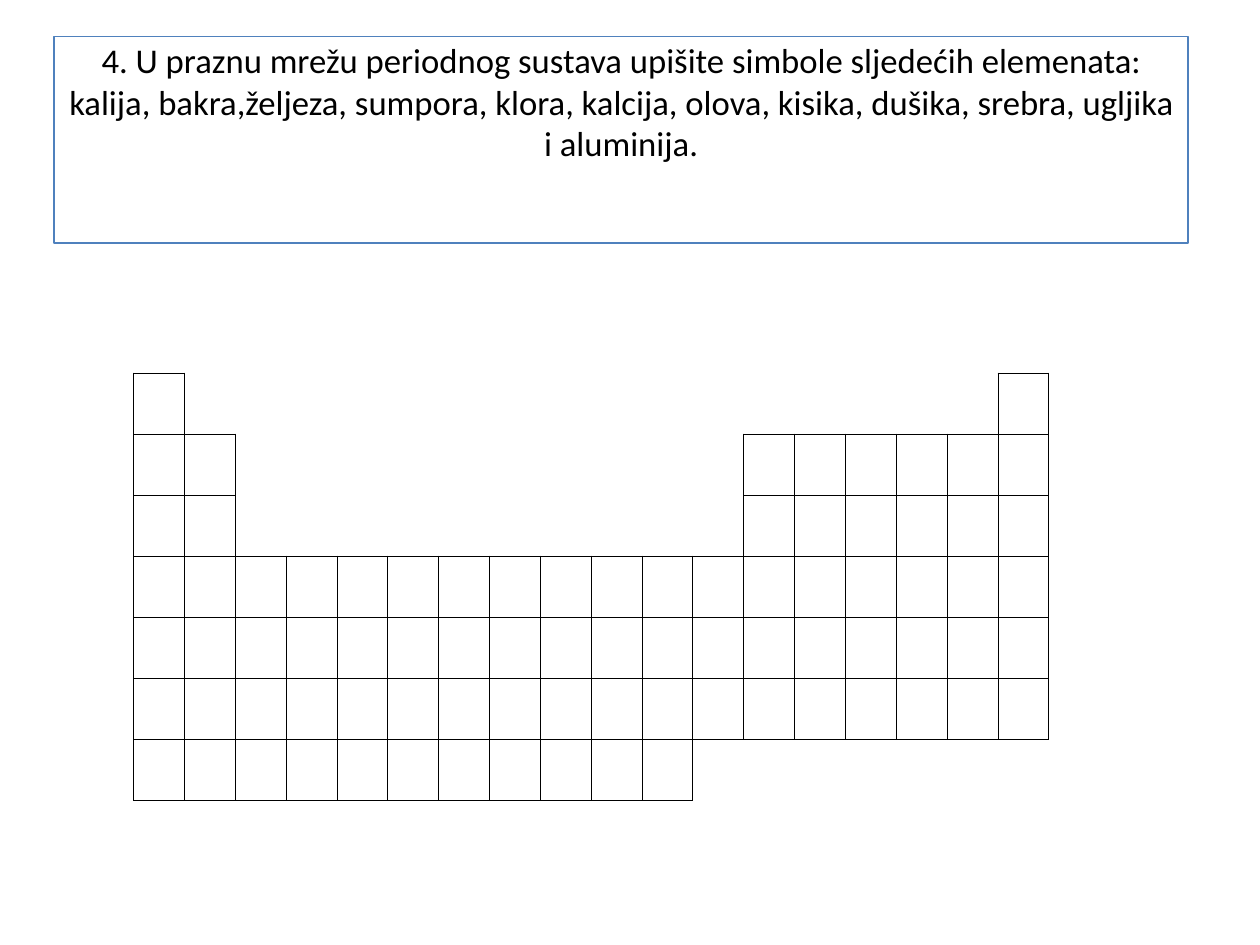
from lxml.etree import SubElement
from pptx import Presentation
from pptx.dml.color import RGBColor
from pptx.enum.shapes import MSO_SHAPE
from pptx.enum.text import MSO_ANCHOR, PP_ALIGN
from pptx.oxml import parse_xml
from pptx.oxml.ns import nsdecls, qn
from pptx.util import Inches, Pt

BLACK = RGBColor(0x00, 0x00, 0x00)
BLUE = RGBColor(0x4F, 0x81, 0xBD)

# Each period of the table: x is an element's cell, a dot is a gap
PERIODS = [
    "x" + "." * 16 + "x",
    "xx" + "." * 10 + "x" * 6,
    "xx" + "." * 10 + "x" * 6,
    "x" * 18,
    "x" * 18,
    "x" * 18,
    "x" * 11 + "." * 7,
]
ROWS, COLUMNS = len(PERIODS), len(PERIODS[0])


def is_element(row, column):
    inside = 0 <= row < ROWS and 0 <= column < COLUMNS
    return inside and PERIODS[row][column] == "x"


deck = Presentation()
deck.slide_width, deck.slide_height = Inches(10), Inches(7.5)
page = deck.slides.add_slide(deck.slide_layouts[6])

# Empty periodic table
grid = page.shapes.add_table(ROWS, COLUMNS, Inches(1.06), Inches(2.96),
                             Inches(7.27), Inches(3.39)).table
grid.first_row = grid.horz_banding = False

# A side is ruled when an element lies on either side of it
for row in range(ROWS):
    for column in range(COLUMNS):
        cell = grid.cell(row, column)
        cell.fill.background()
        sides = [("L", 0, -1), ("R", 0, 1), ("T", -1, 0), ("B", 1, 0)]
        for order, (side, down, across) in enumerate(sides):
            border = parse_xml(f'<a:ln{side} {nsdecls("a")} w="{Pt(0.5)}"/>')
            if is_element(row, column) or is_element(row + down, column + across):
                paint = SubElement(border, qn("a:solidFill"))
                SubElement(paint, qn("a:srgbClr")).set("val", str(BLACK))
            else:
                SubElement(border, qn("a:noFill"))
            cell._tc.get_or_add_tcPr().insert(order, border)

# Framed task text
box = page.shapes.add_shape(MSO_SHAPE.RECTANGLE, Inches(0.43), Inches(0.29),
                            Inches(9), Inches(1.64))
box.shadow.inherit = False
box.fill.background()
box.line.color.rgb = BLUE
box.line.width = Pt(0.75)
frame = box.text_frame
frame.word_wrap = True
frame.vertical_anchor = MSO_ANCHOR.TOP
frame.margin_top = Inches(0.02)
para = frame.paragraphs[0]
para.text = ("4. U praznu mrežu periodnog sustava upišite simbole sljedećih "
             "elemenata: kalija, bakra,željeza, sumpora, klora, kalcija, olova, "
             "kisika, dušika, srebra, ugljika i aluminija.")
para.alignment = PP_ALIGN.CENTER
para.font.name = "Calibri"
para.font.size = Pt(19.8)
para.font.color.rgb = BLACK

deck.save("out.pptx")
